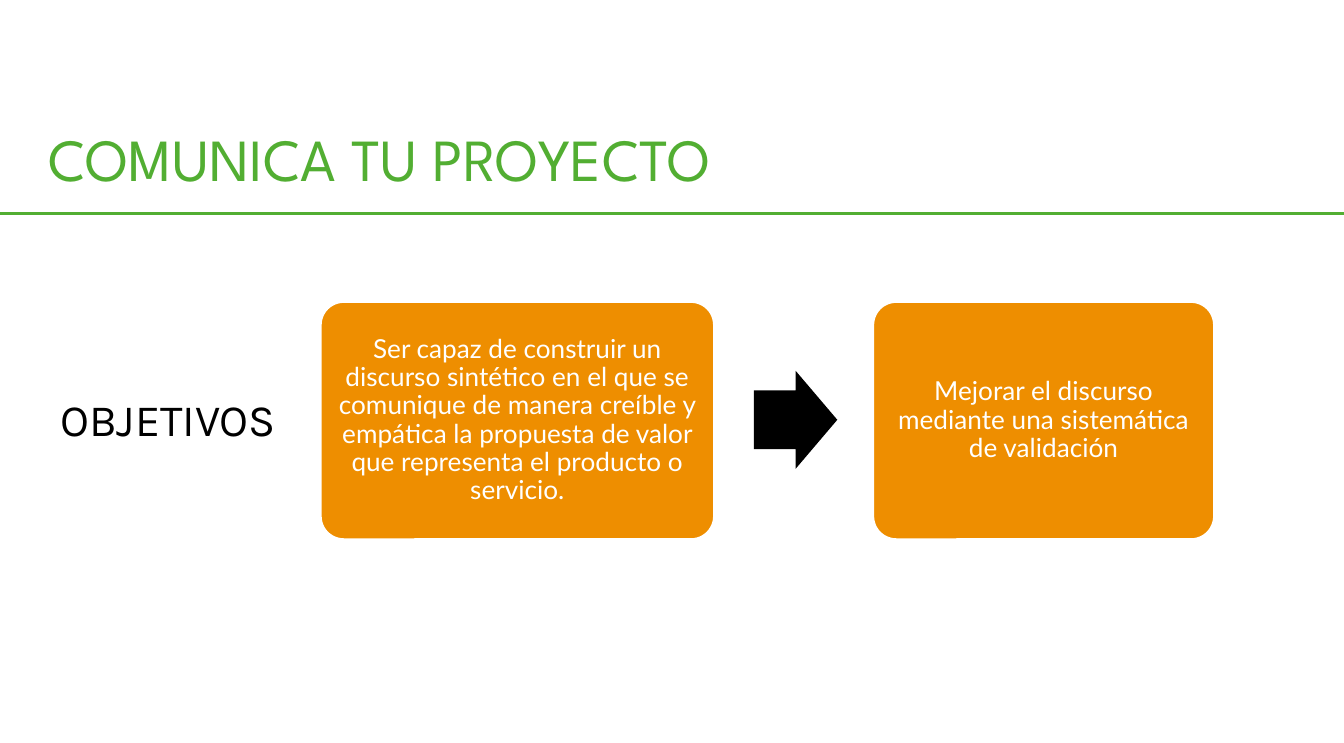
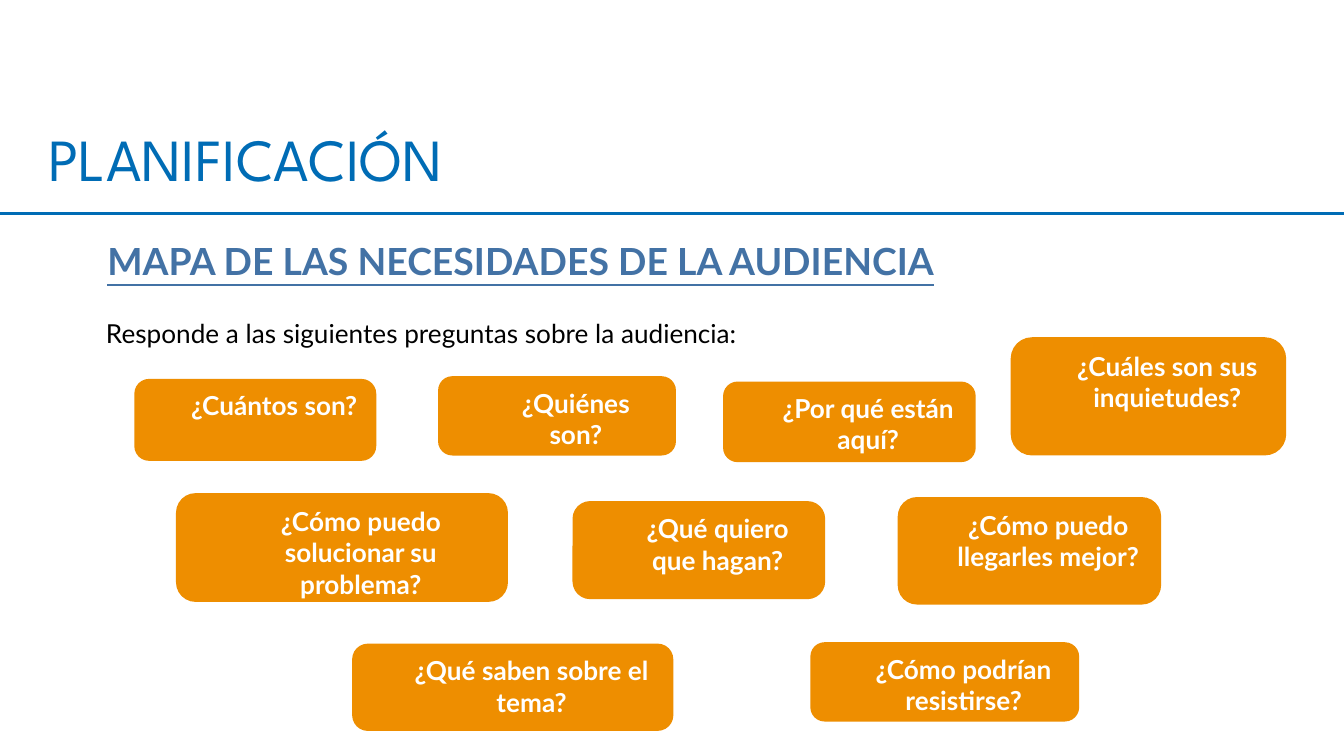
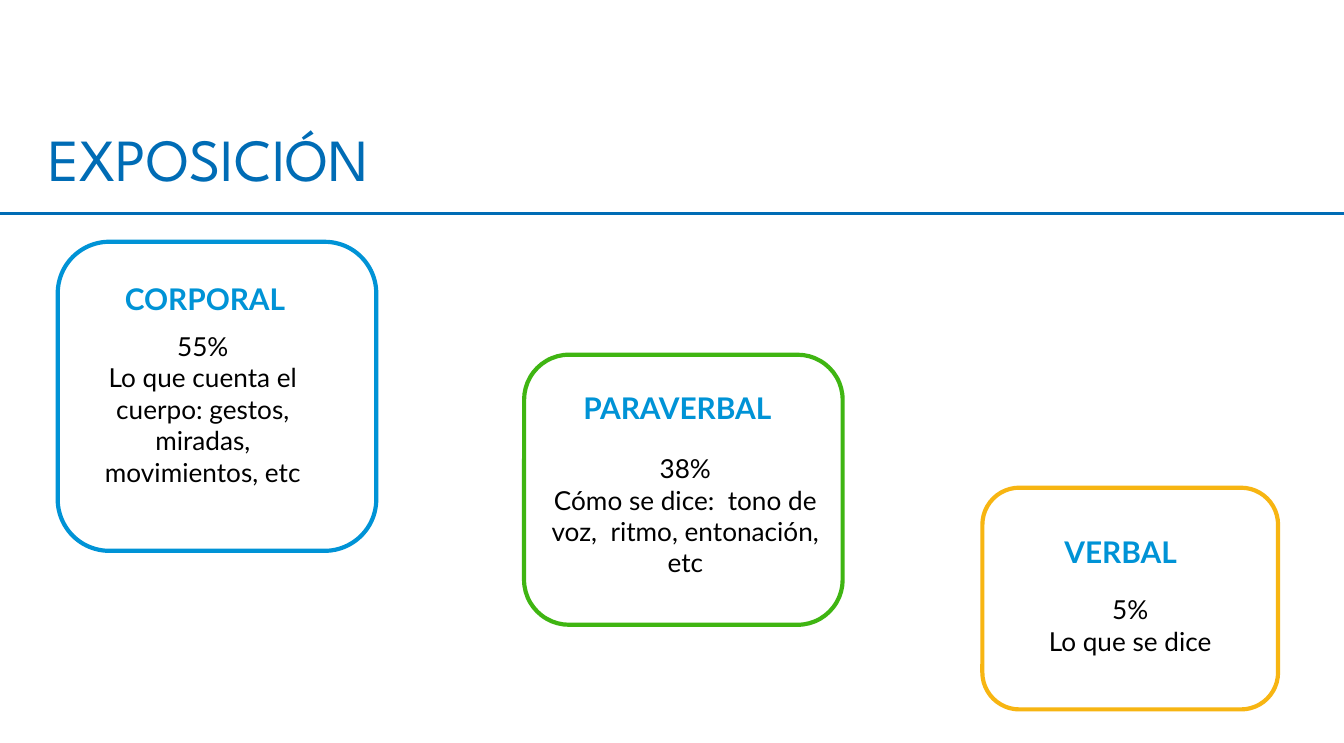
"""Build three slides on communicating a project: goals, audience planning and delivery."""
from lxml.etree import SubElement
from pptx import Presentation
from pptx.dml.color import RGBColor
from pptx.enum.shapes import MSO_CONNECTOR as Connector, MSO_SHAPE as Shape
from pptx.enum.text import MSO_ANCHOR as Anchor, PP_ALIGN as Align
from pptx.oxml.ns import qn
from pptx.util import Pt

PX = 9144
WIDTH, HEIGHT = 1000, 553
GREEN, BLUE, SKY, ORANGE = "52AE32", "006CB5", "0093D6", "EE8E00"
BLACK, WHITE = "000000", "FFFFFF"
TITLE_FONT, LABEL_FONT, BODY_FONT = "League Spartan", "Karla", "Lato"

deck = Presentation()
deck.slide_width, deck.slide_height = WIDTH * PX, HEIGHT * PX


def write(box, lines, size, color, font=BODY_FONT, bold=False, align=Align.LEFT,
          anchor=Anchor.TOP, insets=(10, 5, 10, 5), spacing=1.0):
    frame = box.text_frame
    frame.word_wrap = True
    frame.vertical_anchor = anchor
    (frame.margin_left, frame.margin_top,
     frame.margin_right, frame.margin_bottom) = [inset * PX for inset in insets]
    frame.text = lines
    for para in frame.paragraphs:
        para.alignment = align
        para.line_spacing = spacing
        para.font.name, para.font.size, para.font.bold = font, Pt(size), bold
        para.font.color.rgb = RGBColor.from_string(color)
    return frame


def add_box(page, place, kind=None, fill=None, line=None, weight=2, rounding=None):
    place = [length * PX for length in place]
    if kind is None:
        return page.shapes.add_textbox(*place)
    box = page.shapes.add_shape(kind, *place)
    box.shadow.inherit = False
    if rounding:
        box.adjustments[0] = rounding
    for paint, color in ((box.fill, fill), (box.line.fill, line)):
        if color:
            paint.solid()
            paint.fore_color.rgb = RGBColor.from_string(color)
        else:
            paint.background()
    if line:
        box.line.width = Pt(weight)
    return box


pages = []
for title, color in (("COMUNICA TU PROYECTO", GREEN), ("PLANIFICACIÓN", BLUE), ("EXPOSICIÓN", BLUE)):
    page = deck.slides.add_slide(deck.slide_layouts[6])
    rule = page.shapes.add_connector(Connector.STRAIGHT, 0, 159 * PX, WIDTH * PX, 159 * PX)
    rule.line.color.rgb = RGBColor.from_string(color)
    rule.line.width = Pt(2)
    SubElement(rule._element.spPr, qn("a:effectLst"))
    write(add_box(page, (26, 86, 915, 64)), title, 32, color, TITLE_FONT)
    pages.append(page)
goals, planning, delivery = pages

write(add_box(goals, (35, 287, 213, 50)), "OBJETIVOS", 24, BLACK, LABEL_FONT)
for left, width, goal in (
    (238, 294, "Ser capaz de construir un discurso sintético en el que se comunique de manera "
               "creíble y empática la propuesta de valor que representa el producto o servicio."),
    (649, 255, "Mejorar el discurso mediante una sistemática de validación"),
):
    card = add_box(goals, (left, 224, width, 178), Shape.ROUNDED_RECTANGLE, ORANGE, WHITE, rounding=0.1)
    write(card, goal, 14, WHITE, align=Align.CENTER, anchor=Anchor.MIDDLE,
          insets=(6, 6, 6, 6), spacing=0.9)
arrow = add_box(goals, (561, 276, 62, 73), Shape.RIGHT_ARROW, BLACK, rounding=0.6)

heading = write(add_box(planning, (70, 172, 713, 50)), "MAPA DE LAS NECESIDADES DE LA AUDIENCIA",
                20, "4372A5", bold=True)
heading.paragraphs[0].font.underline = True
write(add_box(planning, (69, 231, 605, 40)), "Responde a las siguientes preguntas sobre la audiencia:",
      14, BLACK)
for place, question in (
    ((100, 282, 180, 61), "¿Cuántos son?"),
    ((326, 280, 177, 59), "¿Quiénes son?"),
    ((538, 284, 188, 60), "¿Por qué están aquí?"),
    ((752, 251, 205, 88), "¿Cuáles son sus inquietudes?"),
    ((131, 367, 247, 81), "¿Cómo puedo solucionar su problema?"),
    ((426, 373, 188, 73), "¿Qué quiero que hagan?"),
    ((668, 370, 196, 80), "¿Cómo puedo llegarles mejor?"),
    ((262, 479, 239, 65), "¿Qué saben sobre el tema?"),
    ((603, 478, 200, 59), "¿Cómo podrían resistirse?"),
):
    bubble = add_box(planning, place, Shape.ROUNDED_RECTANGLE, ORANGE, rounding=0.18)
    write(bubble, question, 14, WHITE, bold=True, align=Align.CENTER, insets=(38, 5, 10, 5))

for frame_place, color, name, name_place, detail, detail_place in (
    ((43, 180, 237, 230), SKY, "CORPORAL", (93, 209, 188, 27),
     "55%\nLo que cuenta el cuerpo: gestos, miradas, movimientos, etc", (71, 246, 160, 117)),
    ((390, 264, 237, 201), "3FB512", "PARAVERBAL", (434, 290, 180, 27),
     "38%\nCómo se dice:  tono de voz,  ritmo, entonación, etc", (402, 337, 216, 94)),
    ((731, 363, 220, 165), "F7B512", "VERBAL", (792, 397, 136, 27),
     "5%\nLo que se dice", (731, 442, 220, 47)),
):
    add_box(delivery, frame_place, Shape.ROUNDED_RECTANGLE, line=color, weight=2.25)
    write(add_box(delivery, name_place), name, 16, SKY, bold=True, insets=(0, 0, 0, 0))
    write(add_box(delivery, detail_place), detail, 14, BLACK, align=Align.CENTER, insets=(0, 0, 0, 0))

deck.save("out.pptx")
